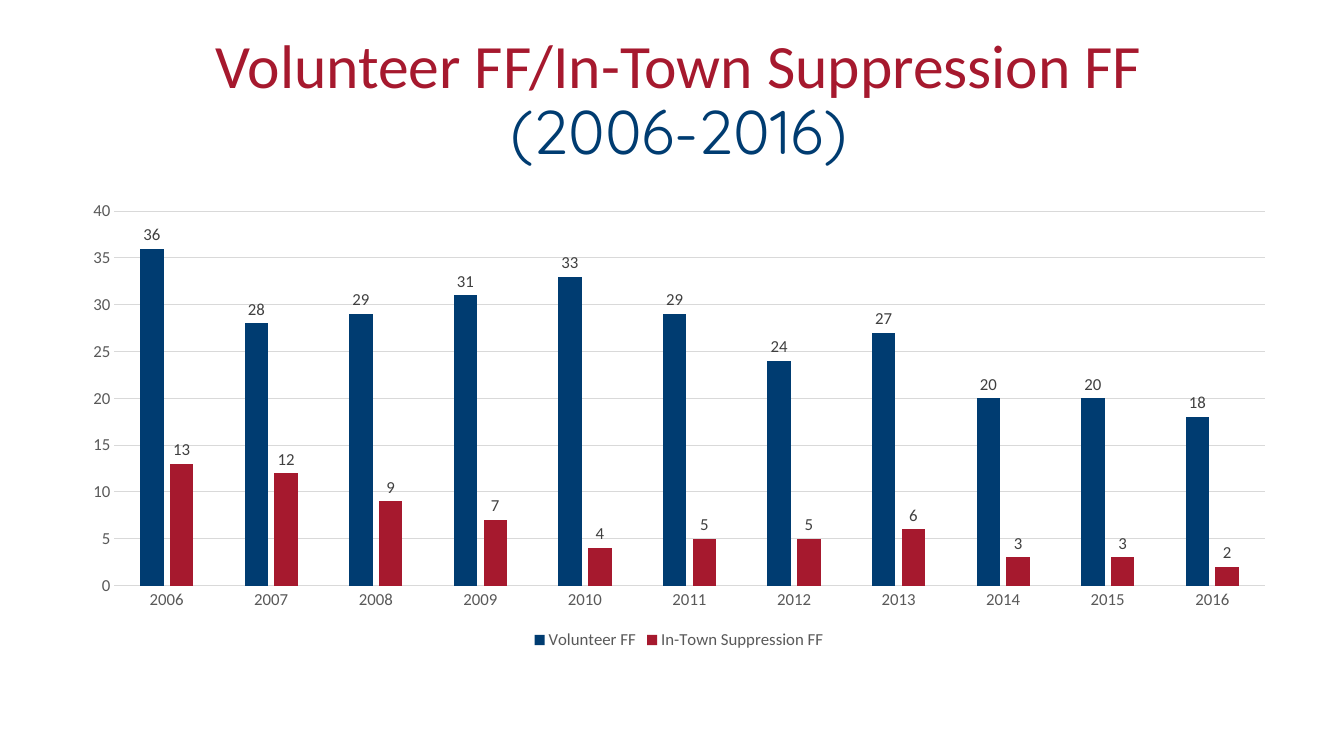
import pptx
import pptx.chart.data
import pptx.dml.color
import pptx.enum.chart
import pptx.enum.text
import pptx.util

TITLE = [("Volunteer FF/In-Town Suppression FF", "Calibri", "red"),
         ("(2006-2016)", "Quicksand", "navy")]
YEARS = [str(year) for year in range(2006, 2017)]
STAFFING = [
    ("Volunteer FF", "navy", (36, 28, 29, 31, 33, 29, 24, 27, 20, 20, 18)),
    ("In-Town Suppression FF", "red", (13, 12, 9, 7, 4, 5, 5, 6, 3, 3, 2)),
]
THEME = {
    "navy": "003C71", "red": "A6192E", "grid": "D9D9D9",
    "axis text": "595959", "label text": "404040",
    "chart font": "Calibri", "title size": 44, "chart size": 12,
}
SLIDE_SIZE = (1344, 756)
TITLE_BOX = (196, 34, 966, 135)
CHART_BOX = (69, 192, 1220, 462)
EMU_PER_PX = 914400 / 100.8


def px(*lengths):
    return [pptx.util.Emu(round(n * EMU_PER_PX)) for n in lengths]


def color(name):
    return pptx.dml.color.RGBColor.from_string(THEME[name])


def set_font(font, face, size, color_name):
    font.name = face
    font.size = pptx.util.Pt(THEME[size])
    font.color.rgb = color(color_name)


def set_chart_font(font, color_name):
    set_font(font, THEME["chart font"], "chart size", color_name)


def set_line(line):
    line.color.rgb = color("grid")
    line.width = pptx.util.Pt(0.75)


def add_title(s):
    tf = s.shapes.add_textbox(*px(*TITLE_BOX)).text_frame
    tf.word_wrap = True
    tf.vertical_anchor = pptx.enum.text.MSO_ANCHOR.MIDDLE
    p = tf.paragraphs[0]
    p.alignment = pptx.enum.text.PP_ALIGN.CENTER
    p.line_spacing = 0.9
    for i, (text, face, color_name) in enumerate(TITLE):
        if i:
            p.add_line_break()
        r = p.add_run()
        r.text = text
        set_font(r.font, face, "title size", color_name)


def add_staffing_chart(s):
    data = pptx.chart.data.CategoryChartData()
    data.categories = YEARS
    for name, _, values in STAFFING:
        data.add_series(name, values)
    kind = pptx.enum.chart.XL_CHART_TYPE.COLUMN_CLUSTERED
    chart = s.shapes.add_chart(kind, *px(*CHART_BOX), data).chart
    set_chart_font(chart.font, "axis text")
    chart.has_title = False

    chart.has_legend = True
    chart.legend.position = pptx.enum.chart.XL_LEGEND_POSITION.BOTTOM
    chart.legend.include_in_layout = False
    set_chart_font(chart.legend.font, "axis text")

    for axis in (chart.category_axis, chart.value_axis):
        axis.major_tick_mark = pptx.enum.chart.XL_TICK_MARK.NONE
        axis.minor_tick_mark = pptx.enum.chart.XL_TICK_MARK.NONE
        set_chart_font(axis.tick_labels.font, "axis text")
    set_line(chart.category_axis.format.line)
    chart.value_axis.format.line.fill.background()
    chart.value_axis.minimum_scale = 0
    chart.value_axis.maximum_scale = 40
    chart.value_axis.major_unit = 5
    set_line(chart.value_axis.major_gridlines.format.line)

    plot = chart.plots[0]
    plot.gap_width = 219
    plot.overlap = -27
    plot.vary_by_categories = False
    for series, (_, color_name, _) in zip(plot.series, STAFFING):
        series.invert_if_negative = False
        series.format.fill.solid()
        series.format.fill.fore_color.rgb = color(color_name)
        labels = series.data_labels
        labels.show_value = True
        labels.position = pptx.enum.chart.XL_LABEL_POSITION.OUTSIDE_END
        set_chart_font(labels.font, "label text")


def main():
    prs = pptx.Presentation()
    prs.slide_width, prs.slide_height = px(*SLIDE_SIZE)
    s = prs.slides.add_slide(prs.slide_layouts[6])
    add_title(s)
    add_staffing_chart(s)
    prs.save("out.pptx")


if __name__ == "__main__":
    main()
